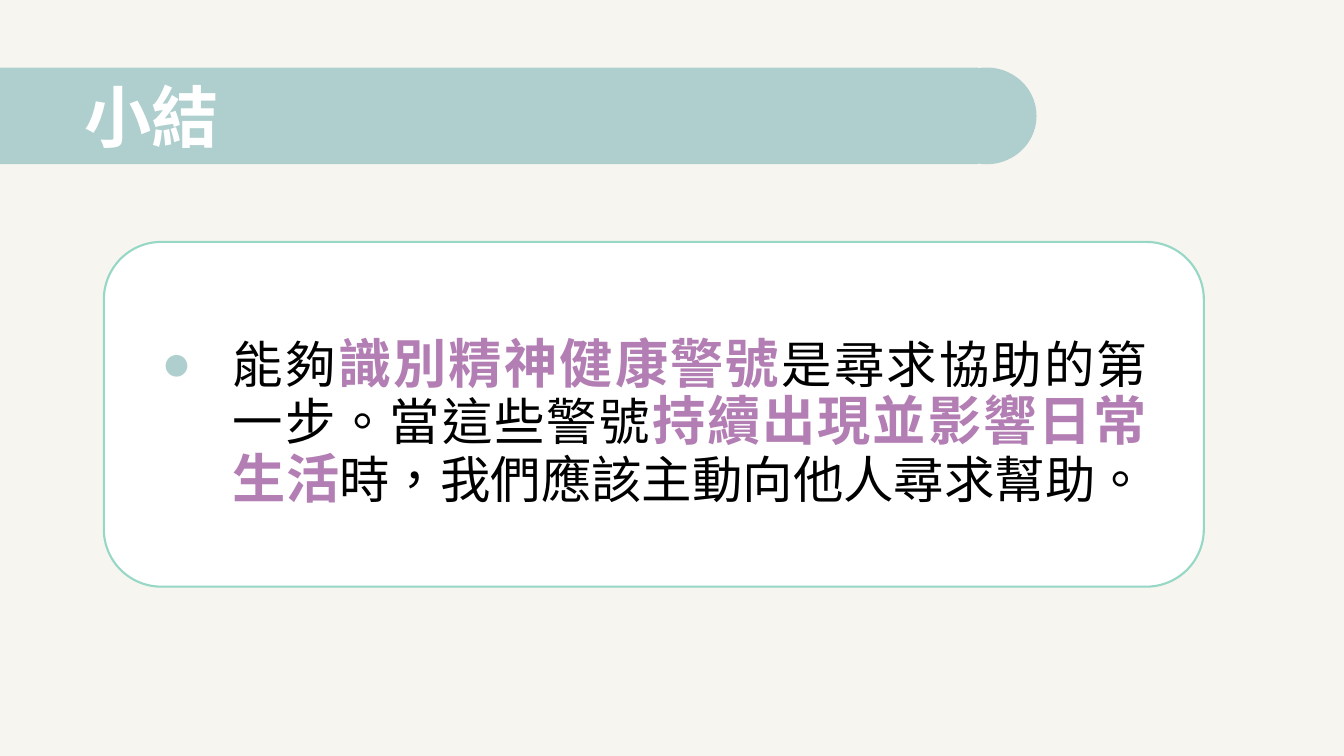
from lxml import etree
from pptx import Presentation
from pptx.dml.color import RGBColor
from pptx.enum.lang import MSO_LANGUAGE_ID
from pptx.enum.shapes import MSO_SHAPE
from pptx.enum.text import MSO_ANCHOR, MSO_AUTO_SIZE, PP_ALIGN
from pptx.oxml.ns import qn
from pptx.util import Inches, Pt

RECT, OVAL, ROUNDED = MSO_SHAPE.RECTANGLE, MSO_SHAPE.OVAL, MSO_SHAPE.ROUNDED_RECTANGLE
MIDDLE, NO_AUTOFIT = MSO_ANCHOR.MIDDLE, MSO_AUTO_SIZE.NONE
LEFT, JUSTIFY = PP_ALIGN.LEFT, PP_ALIGN.JUSTIFY
CHINESE = MSO_LANGUAGE_ID.TRADITIONAL_CHINESE

CREAM, WHITE, TEAL, MINT = "F7F5EF", "FFFFFF", "AECFCE", "96D7C6"
SANS_SC, SANS_TC = "Noto Sans CJK SC", "Noto Sans CJK TC"
TITLE = {"size": Pt(48), "bold": True, "name": SANS_TC, "color": WHITE}
PLAIN = {"size": Pt(36), "bold": False, "name": SANS_SC, "color": "000000"}
STRONG = {"size": Pt(38), "bold": True, "name": SANS_TC, "color": "B27EB3"}

SUMMARY = [
    ("能夠", PLAIN),
    ("識別精神健康警號", STRONG),
    ("是尋求協助的第一步。當這些警號", PLAIN),
    ("持續出現並影響日常生活", STRONG),
    ("時，我們應該主動向他人尋求幫助。", PLAIN),
]


def rgb(value):
    return RGBColor.from_string(value)


def add_panel(slide, kind, box, fill, line=None):
    panel = slide.shapes.add_shape(kind, *map(Inches, box))
    panel.shadow.inherit = False
    panel.fill.solid()
    panel.fill.fore_color.rgb = rgb(fill)
    if line:
        panel.line.color.rgb = rgb(line)
        panel.line.width = Pt(1.5)
    else:
        panel.line.fill.background()


def place_text(placeholder, box, align):
    """Moves a placeholder to the front and into its box; returns its paragraph."""
    placeholder.element.getparent().append(placeholder.element)
    places = zip(("left", "top", "width", "height"), map(Inches, box))
    for side, length in places:
        setattr(placeholder, side, length)
    frame = placeholder.text_frame
    layout = {"word_wrap": True, "auto_size": NO_AUTOFIT, "vertical_anchor": MIDDLE}
    for key, value in layout.items():
        setattr(frame, key, value)
    paragraph = frame.paragraphs[0]
    for key, value in {"alignment": align, "line_spacing": 0.9, "space_before": Pt(0)}.items():
        setattr(paragraph, key, value)
    return paragraph


def add_run(paragraph, wording, style):
    run = paragraph.add_run()
    run.text = wording
    for key in ("size", "bold", "name"):
        setattr(run.font, key, style[key])
    run.font.color.rgb = rgb(style["color"])
    run.font.language_id = CHINESE
    # East Asian typeface follows the latin one
    latin = run.font._element.find(qn("a:latin"))
    east_asian = etree.Element(qn("a:ea"), typeface=style["name"])
    latin.addnext(east_asian)


def add_bullet(paragraph, indent):
    props = paragraph._p.get_or_add_pPr()
    props.set("marL", str(Inches(indent)))
    props.set("indent", str(-Inches(indent)))
    color = etree.SubElement(props, qn("a:buClr"))
    etree.SubElement(color, qn("a:srgbClr"), val=TEAL)
    etree.SubElement(props, qn("a:buFont"), typeface="Arial")
    etree.SubElement(props, qn("a:buChar"), char="●")


def build_summary(slide, box):
    left, top, width, height = box
    add_panel(slide, ROUNDED, box, WHITE, MINT)
    body = slide.placeholders[1]
    text_box = (left + 0.47, top - 0.28, width - 0.93, height + 1)
    paragraph = place_text(body, text_box, JUSTIFY)
    body.text_frame.margin_bottom = Inches(0.31)
    add_bullet(paragraph, 0.71)
    for wording, style in SUMMARY:
        add_run(paragraph, wording, style)


def build_banner(slide, box):
    left, top, width, height = box
    cap = 0.99
    # Straight bar with a round end
    add_panel(slide, RECT, (left, top, width - 0.58, height), TEAL)
    add_panel(slide, OVAL, (left + width - cap, top, cap, height), TEAL)
    heading = place_text(slide.shapes.title, (left + 0.74, top - 0.2, 11.5, 1.45), LEFT)
    add_run(heading, "小結", TITLE)


def main():
    deck = Presentation()
    deck.slide_width, deck.slide_height = Inches(13.33), Inches(7.5)
    slide = deck.slides.add_slide(deck.slide_layouts[1])
    # Backdrop
    add_panel(slide, RECT, (0, 0, 13.33, 7.5), CREAM)
    # Summary card, then title banner
    build_summary(slide, (1.03, 2.4, 10.91, 3.42))
    build_banner(slide, (0, 0.67, 10.28, 0.96))
    deck.save("out.pptx")


if __name__ == "__main__":
    main()
